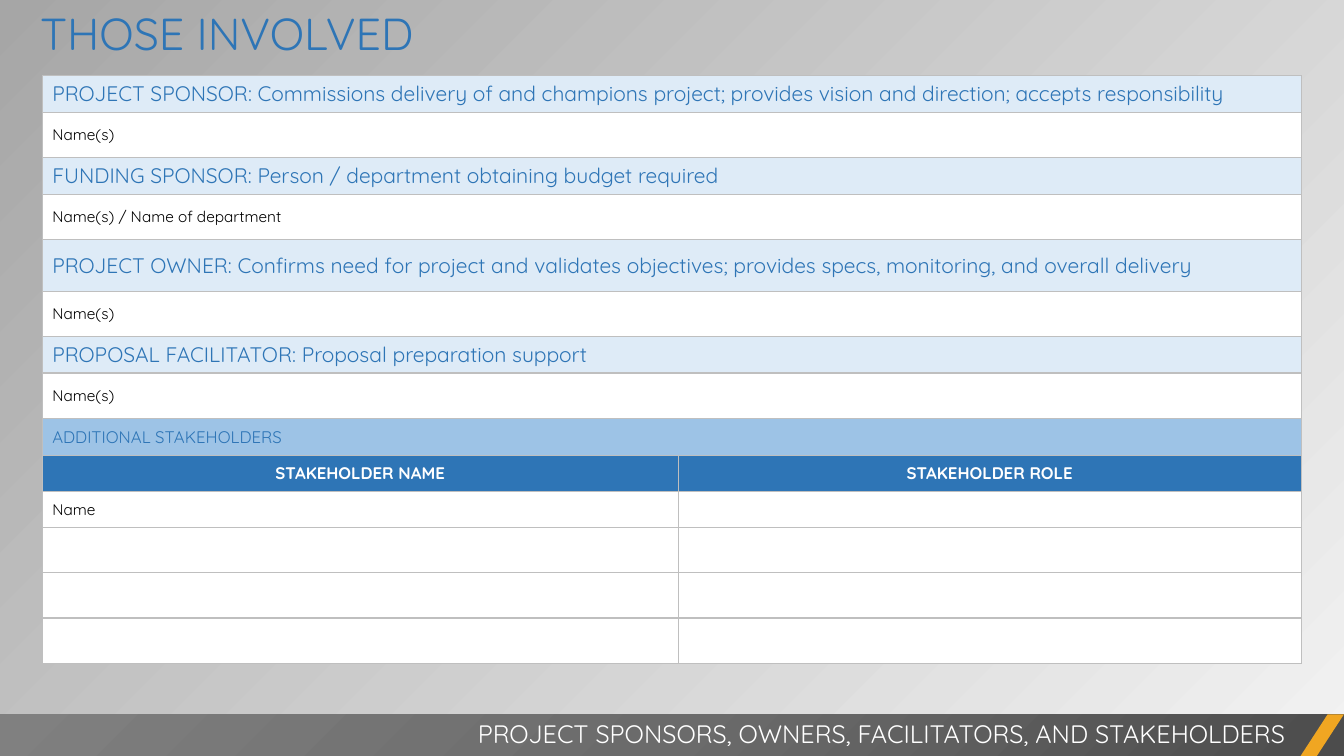
"""Builds the slide of project sponsors, owners, facilitators and stakeholders."""
from dataclasses import dataclass

from lxml import etree
from pptx import Presentation
from pptx import util as u
from pptx.dml.color import RGBColor
from pptx.enum import shapes, text
from pptx.oxml import ns

TITLE = "THOSE INVOLVED"
FOOTER = "PROJECT SPONSORS, OWNERS, FACILITATORS, AND STAKEHOLDERS"
ROWS = [
    ("role", 26.2, ["PROJECT SPONSOR: Commissions delivery of and champions project; "
                    "provides vision and direction; accepts responsibility"]),
    ("entry", 32.5, ["Name(s)"]),
    ("role", 26.2, ["FUNDING SPONSOR: Person / department obtaining budget required"]),
    ("entry", 32.5, ["Name(s) / Name of department"]),
    ("role", 36.7, ["PROJECT OWNER: Confirms need for project and validates objectives; "
                    "provides specs, monitoring, and overall delivery"]),
    ("entry", 32.5, ["Name(s)"]),
    ("role", 25.6, ["PROPOSAL FACILITATOR: Proposal preparation support"]),
    ("entry", 32.5, ["Name(s)"]),
    ("section", 26.2, ["ADDITIONAL STAKEHOLDERS"]),
    ("heading", 26.2, ["STAKEHOLDER NAME", "STAKEHOLDER ROLE"]),
    ("entry", 25.2, ["Name", ""]),
    ("entry", 32.5, ["", ""]),
    ("entry", 32.5, ["", ""]),
    ("entry", 32.5, ["", ""]),
]
COLUMNS = [454.3, 445]


@dataclass(frozen=True)
class Theme:
    """Colours and type sizes."""
    font: str = "Quicksand"
    blue: str = "2E75B6"
    white: str = "FFFFFF"
    accent: str = "F0A622"
    border: str = "BFBFBF"
    backdrop: tuple = ("F2F2F2", "A6A6A6")
    bar: tuple = ((0, "4C4C4C"), (50, "6B6B6B"), (100, "808080"))
    title_size: float = 32
    footer_size: float = 18


THEME = Theme()
ROW_STYLES = {
    "role": dict(fill="DEEBF7", size=15, color=THEME.blue),
    "entry": dict(fill=THEME.white, size=11, color="000000"),
    "section": dict(fill="9DC3E6", size=12, color=THEME.blue),
    "heading": dict(fill=THEME.blue, size=12, color=THEME.white, bold=True,
                    align=text.PP_ALIGN.CENTER),
}
WIDTH, HEIGHT, BAR_TOP = 960, 540, 510.2


def points(*lengths):
    return [u.Pt(length) for length in lengths]


def node(parent, tag, **attributes):
    return etree.SubElement(parent, ns.qn(tag), attributes)


def write(frame, words, size, color, bold=False, align=text.PP_ALIGN.LEFT):
    paragraph = frame.paragraphs[0]
    paragraph.alignment = align
    if not words:
        node(paragraph._p, "a:endParaRPr", sz=str(size * 100))
        return
    run = paragraph.add_run()
    run.text = words
    run.font.name = THEME.font
    run.font.size = u.Pt(size)
    run.font.bold = bold
    run.font.color.rgb = RGBColor.from_string(color)


def add_label(slide, box, words, size, color, align=text.PP_ALIGN.LEFT):
    label = slide.shapes.add_textbox(*points(*box))
    label.text_frame.word_wrap = True
    label.text_frame.auto_size = text.MSO_AUTO_SIZE.SHAPE_TO_FIT_TEXT
    write(label.text_frame, words, size, color, align=align)


def add_block(slide, kind, box, color):
    block = slide.shapes.add_shape(kind, *points(*box))
    block.shadow.inherit = False
    block.line.fill.background()
    block.fill.solid()
    block.fill.fore_color.rgb = RGBColor.from_string(color)
    return block


def fill_from_corner(block, stops):
    solid = block._element.spPr.find(ns.qn("a:solidFill"))
    gradient = etree.Element(ns.qn("a:gradFill"), rotWithShape="1")
    stop_list = node(gradient, "a:gsLst")
    for position, color in stops:
        stop = node(stop_list, "a:gs", pos=str(position * 1000))
        node(stop, "a:srgbClr", val=color)
    spread = node(gradient, "a:path", path="circle")
    node(spread, "a:fillToRect", l="100000", t="100000")
    solid.getparent().replace(solid, gradient)


def style_cell(cell, fill):
    cell.vertical_anchor = text.MSO_ANCHOR.MIDDLE
    cell.fill.solid()
    cell.fill.fore_color.rgb = RGBColor.from_string(fill)
    properties = cell._tc.get_or_add_tcPr()
    for index, side in enumerate(("a:lnL", "a:lnR", "a:lnT", "a:lnB")):
        edge = etree.Element(ns.qn(side), w=str(u.Pt(1)))
        node(node(edge, "a:solidFill"), "a:srgbClr", val=THEME.border)
        properties.insert(index, edge)


def add_people_table(slide):
    box = (30.2, 54, sum(COLUMNS), sum(height for _, height, _ in ROWS))
    people = slide.shapes.add_table(len(ROWS), len(COLUMNS), *points(*box)).table
    people.first_row = people.horz_banding = False
    for column, width in zip(people.columns, COLUMNS):
        column.width = u.Pt(width)
    for index, (kind, height, entries) in enumerate(ROWS):
        row = people.rows[index]
        row.height = u.Pt(height)
        style = dict(ROW_STYLES[kind])
        fill = style.pop("fill")
        for cell in row.cells:
            style_cell(cell, fill)
        if len(entries) == 1:
            people.cell(index, 0).merge(people.cell(index, 1))
        for cell, words in zip(row.cells, entries):
            write(cell.text_frame, words, **style)


def main():
    deck = Presentation()
    deck.slide_width, deck.slide_height = points(WIDTH, HEIGHT)
    slide = deck.slides.add_slide(deck.slide_layouts[6])
    backdrop = slide.background.fill
    backdrop.gradient()
    backdrop.gradient_angle = 135
    for stop, color in zip(backdrop.gradient_stops, THEME.backdrop):
        stop.color.rgb = RGBColor.from_string(color)

    add_people_table(slide)
    add_label(slide, (21.6, 0.7, 618.5, 46), TITLE, THEME.title_size, THEME.blue)
    bar_height = HEIGHT - BAR_TOP
    bar = add_block(slide, shapes.MSO_SHAPE.RECTANGLE,
                    (0, BAR_TOP, WIDTH, bar_height), THEME.bar[0][1])
    fill_from_corner(bar, THEME.bar)
    slash_width = 31
    slash = add_block(slide, shapes.MSO_SHAPE.PARALLELOGRAM,
                      (WIDTH - slash_width, BAR_TOP, slash_width, bar_height), THEME.accent)
    slash.adjustments[0] = 0.65
    add_label(slide, (21.6, 509.8, 903.6, 29), FOOTER, THEME.footer_size,
              THEME.white, text.PP_ALIGN.RIGHT)
    deck.save("out.pptx")


if __name__ == "__main__":
    main()
